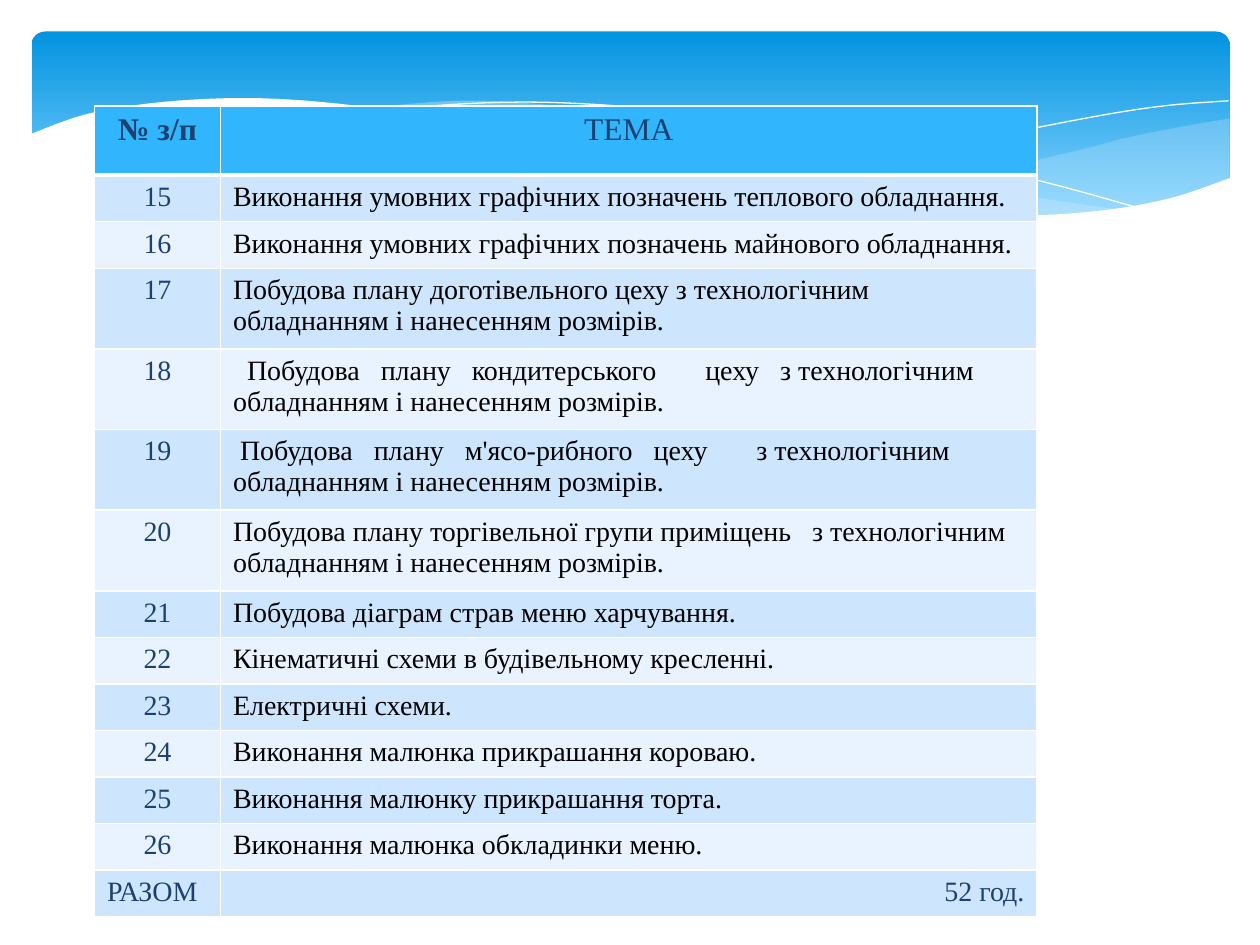
from itertools import chain

from lxml.etree import SubElement
from pptx import Presentation
from pptx.dml.color import RGBColor as RGB
from pptx.enum.shapes import MSO_SHAPE as SHAPE
from pptx.enum.text import PP_ALIGN as AL
from pptx.oxml import parse_xml
from pptx.oxml.ns import nsdecls, qn
from pptx.util import Inches, Pt

CELL = Inches(0.1)
COLORS = {
    "sky": "0293E0", "light": "83D3FE", "veil": "C6E7FC", "white": "FFFFFF",
    "head": "31B6FD", "odd": "CEE5FE", "even": "E8F3FF",
    "navy": "1B4171", "black": "000000",
}
BAND_BOX = (2.5, 2.5, 95.1, 15.6)
TABLE_BOX = (7.5, 8.4, 74.8, 64.4)
NUM_COL = 10
HEAD_ROW, ROW, TALL_ROW = 5.5, 3.7, 6.4
TALL = {17, 18, 19, 20}
FIRST = 15

RIGHT_VEIL = [
    [(95.1, 6.9), (91, 7.6), (86.6, 8.5), (83.6, 9.3), (75.4, 11.2), (68.1, 12.7), (63.6, 13.5)],
    [(63.6, 13.5), (68, 14), (73.2, 14.5), (78.9, 14.7), (84.7, 14.4), (89.6, 13.5),
     (92.4, 12.7), (95.1, 11.6)],
]
LONG_VEIL = [
    [(86.8, 14.2), (81.2, 13.4), (75, 12.4), (68.1, 10.9), (60.4, 9.1), (53, 7.5),
     (46.4, 6.4), (39.5, 5.7), (33.6, 5.5), (26.1, 6.1)],
    [(26.1, 6.1), (31.7, 6.9), (37.9, 8.1), (46.6, 10.1), (54.1, 11.8), (60.9, 13.1),
     (67, 14), (73.6, 14.6), (79.3, 14.8), (83.2, 14.6), (86.8, 14.2)],
]
FALLING_LINE = [[(28.4, 6.5), (31.9, 5.9), (39.1, 5.6), (46.4, 5.9), (53.1, 6.6),
                 (61.1, 7.8), (70.2, 9.5), (80.6, 12), (88.2, 14.1)]]
RISING_LINE = [[(58.8, 12.6), (67, 10.5), (75.1, 8.6), (84.1, 6.8), (89.9, 5.9), (95, 5.5)]]
WHITE_WAVE = [
    [(95.2, 11.6), (90.5, 13.2), (85, 14.2), (78.4, 14.6), (70.1, 14.2), (60.1, 12.8),
     (50.4, 10.8), (42.2, 8.9), (34, 7.1), (26.7, 6), (20.5, 5.4), (15.2, 5.3),
     (9.4, 5.7), (4.2, 6.6), (-0.2, 8.2)],
    [(-0.2, 19.9), (95.2, 19.9)],
]
WAVES = [
    (RIGHT_VEIL, {"fill": "veil", "alpha": 29}),
    (LONG_VEIL, {"fill": "veil", "alpha": 40}),
    (FALLING_LINE, {"line": "white"}),
    (RISING_LINE, {"line": "white"}),
    (WHITE_WAVE, {"fill": "white"}),
]
TOPICS = [
    "Виконання умовних графічних позначень теплового обладнання.",
    "Виконання умовних графічних позначень майнового обладнання.",
    "Побудова плану доготівельного цеху з технологічним обладнанням і нанесенням розмірів.",
    "  Побудова   плану   кондитерського       цеху   з технологічним обладнанням і нанесенням розмірів.",
    " Побудова   плану   м'ясо-рибного   цеху       з технологічним обладнанням і нанесенням розмірів.",
    "Побудова плану торгівельної групи приміщень   з технологічним обладнанням і нанесенням розмірів.",
    "Побудова діаграм страв меню харчування.",
    "Кінематичні схеми в будівельному кресленні.",
    "Електричні схеми.",
    "Виконання малюнка прикрашання короваю.",
    "Виконання малюнку прикрашання торта.",
    "Виконання малюнка обкладинки меню.",
]


def rgb(name):
    """Return the named colour."""
    return RGB.from_string(COLORS[name])


def cells(*values):
    """Turn grid cells into lengths."""
    return [round(v * CELL) for v in values]


def smooth(pts, steps=5):
    """Return points on a Catmull-Rom curve through the given points."""
    ends = [pts[0], *pts, pts[-1]]
    curve = [pts[0]]
    for a, b, c, d in zip(ends, ends[1:], ends[2:], ends[3:]):
        for t in (i / steps for i in range(1, steps + 1)):
            curve.append(tuple(
                (2 * q + (r - p) * t + (2 * p - 5 * q + 4 * r - s) * t**2
                 + (3 * q - p - 3 * r + s) * t**3) / 2
                for p, q, r, s in zip(a, b, c, d)))
    return curve


def add_wave(slide, box, edges, fill=None, line=None, alpha=100):
    """Draw one smooth outline, filled or as an open line."""
    x, y = box[:2]
    pts = [cells(x + u, y + v) for u, v in chain.from_iterable(
        smooth(e) if len(e) > 2 else e for e in edges)]
    fb = slide.shapes.build_freeform(*pts[0])
    fb.add_line_segments(pts[1:], close=bool(fill))
    sp = fb.convert_to_shape()
    sp.shadow.inherit = False
    if fill:
        sp.fill.solid()
        sp.fill.fore_color.rgb = rgb(fill)
        sp.line.fill.background()
        if alpha < 100:
            clr = sp.fill._xPr.find(qn("a:solidFill"))[0]
            SubElement(clr, qn("a:alpha")).set("val", str(alpha * 1000))
    else:
        sp.fill.background()
        sp.line.color.rgb = rgb(line)
        sp.line.width = Pt(0)


def add_band(slide, box):
    """Draw the blue gradient band and the waves over it."""
    sp = slide.shapes.add_shape(SHAPE.ROUNDED_RECTANGLE, *cells(*box))
    sp.adjustments[0] = 0.07
    sp.shadow.inherit = False
    sp.line.fill.background()
    sp.fill.gradient()
    sp.fill.gradient_angle = 270
    for stop, name, pos in zip(sp.fill.gradient_stops, ("sky", "light"), (0, 0.9)):
        stop.color.rgb = rgb(name)
        stop.position = pos
    for edges, style in WAVES:
        add_wave(slide, box, edges, **style)


def set_cell(cell, text, fill, color, align, size=16, bold=False, top=1, bottom=1):
    """Write and format one table cell."""
    p = cell.text_frame.paragraphs[0]
    p.alignment = align
    r = p.add_run()
    r.text = text
    for key, value in {"name": "Times New Roman", "size": Pt(size), "bold": bold}.items():
        setattr(r.font, key, value)
    r.font.color.rgb = rgb(color)
    cell.fill.solid()
    cell.fill.fore_color.rgb = rgb(fill)
    tc_pr = cell._tc.get_or_add_tcPr()
    for i, (side, width) in enumerate({"L": 1, "R": 1, "T": top, "B": bottom}.items()):
        tc_pr.insert(i, parse_xml(
            f'<a:ln{side} {nsdecls("a")} w="{Pt(width)}"><a:solidFill>'
            f'<a:srgbClr val="{COLORS["white"]}"/></a:solidFill></a:ln{side}>'))


def add_topics(slide, box):
    """Place the table of numbered topics with its header and total."""
    count = len(TOPICS) + 2
    table = slide.shapes.add_table(count, 2, *cells(*box)).table
    table.horz_banding = False
    heights = [HEAD_ROW, *(TALL_ROW if FIRST + i in TALL else ROW for i in range(count - 1))]
    for row, height in zip(table.rows, cells(*heights)):
        row.height = height
    for col, width in zip(table.columns, cells(NUM_COL, box[2] - NUM_COL)):
        col.width = width
    head = {"fill": "head", "color": "navy", "align": AL.CENTER, "size": 18, "bottom": 3}
    set_cell(table.cell(0, 0), "№ з/п", bold=True, **head)
    set_cell(table.cell(0, 1), "ТЕМА", **head)
    for i, topic in enumerate(TOPICS, 1):
        style = {"fill": "odd" if i % 2 else "even", "top": 3 if i == 1 else 1}
        set_cell(table.cell(i, 0), str(FIRST + i - 1), color="navy", align=AL.CENTER, **style)
        set_cell(table.cell(i, 1), topic, color="black", align=AL.LEFT, **style)
    for j, (text, align) in enumerate((("РАЗОМ", AL.LEFT), ("52 год.", AL.RIGHT))):
        set_cell(table.cell(count - 1, j), text, "odd", "navy", align)


def main():
    """Build and save the slide."""
    prs = Presentation()
    prs.slide_width, prs.slide_height = cells(100, 75)
    slide = prs.slides.add_slide(prs.slide_layouts[6])
    add_band(slide, BAND_BOX)
    add_topics(slide, TABLE_BOX)
    prs.save("out.pptx")


if __name__ == "__main__":
    main()
